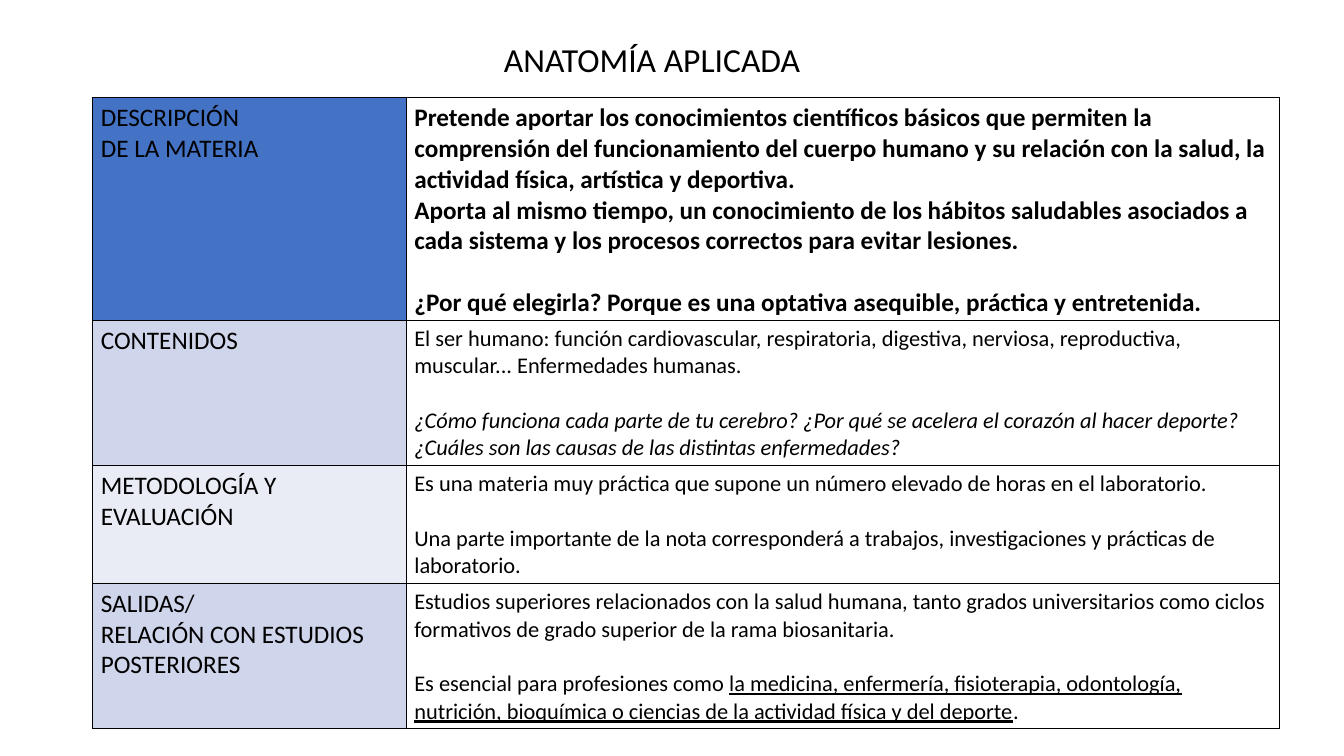
from lxml.etree import SubElement
from pptx import Presentation
from pptx.dml.color import RGBColor
from pptx.oxml.ns import qn
from pptx.util import Inches, Pt

BLACK = RGBColor(0x00, 0x00, 0x00)
BLUE = RGBColor(0x44, 0x72, 0xC4)
LIGHT = RGBColor(0xCF, 0xD5, 0xEA)
PALE = RGBColor(0xE9, 0xEB, 0xF5)
FONT = "Calibri"
LABEL_SIZE = 18
LINE_HEIGHT = 1.22

TITLE = "ANATOMÍA APLICADA"
COLUMN_WIDTHS = [3.11, 8.66]

# Each section: height, label colour, label lines, body size, body paragraphs.
# A paragraph is a list of (text, style); the last one stands a line apart.
SECTIONS = [
    (2.2, BLUE, ["DESCRIPCIÓN", "DE LA MATERIA"], 18, [
        [("Pretende aportar los conocimientos científicos básicos que permiten la "
          "comprensión del funcionamiento del cuerpo humano y su relación con la "
          "salud, la actividad física, artística y deportiva.", "bold")],
        [("Aporta al mismo tiempo, un conocimiento de los hábitos saludables "
          "asociados a cada sistema y los procesos correctos para evitar "
          "lesiones.", "bold")],
        [("¿Por qué elegirla? Porque es una optativa asequible, práctica y "
          "entretenida.", "bold")],
    ]),
    (1.44, LIGHT, ["CONTENIDOS"], 16, [
        [("El ser humano: función cardiovascular, respiratoria, digestiva, "
          "nerviosa, reproductiva, muscular... Enfermedades humanas.", "plain")],
        [("¿Cómo funciona cada parte de tu cerebro? ¿Por qué se acelera el corazón "
          "al hacer deporte? ¿Cuáles son las causas de las distintas "
          "enfermedades?", "italic")],
    ]),
    (1.17, PALE, ["METODOLOGÍA Y", "EVALUACIÓN"], 16, [
        [("Es una materia muy práctica que supone un número elevado de horas en el "
          "laboratorio.", "plain")],
        [("Una parte importante de la nota corresponderá a trabajos, "
          "investigaciones y prácticas de laboratorio.", "plain")],
    ]),
    (1.43, LIGHT, ["SALIDAS/", "RELACIÓN CON ESTUDIOS", "POSTERIORES"], 16, [
        [("Estudios superiores relacionados con la salud humana, tanto grados "
          "universitarios como ciclos formativos de grado superior de la rama "
          "biosanitaria.", "plain")],
        [("Es esencial para profesiones como ", "plain"),
         ("la medicina, enfermería, fisioterapia, odontología, nutrición, "
          "bioquímica o ciencias de la actividad física y del deporte", "underline"),
         (".", "plain")],
    ]),
]


def add_span(para, text, size, style="plain"):
    span = para.add_run()
    span.text = text
    font = span.font
    font.name, font.size = FONT, Pt(size)
    font.color.rgb = BLACK
    font.bold = style == "bold"
    font.italic = style == "italic"
    font.underline = style == "underline"


def write_paragraphs(frame, paragraphs, size):
    for index, spans in enumerate(paragraphs):
        para = frame.add_paragraph() if index else frame.paragraphs[0]
        for text, style in spans:
            add_span(para, text, size, style)
    return para


def prepare_cell(cell):
    """Set the margins and a thin black line on every side."""
    cell.margin_left = cell.margin_right = Inches(0.08)
    cell.margin_top = cell.margin_bottom = Inches(0.05)
    properties = cell._tc.get_or_add_tcPr()
    for side in ("a:lnL", "a:lnR", "a:lnT", "a:lnB"):
        line = SubElement(properties, qn(side), w=str(Pt(0.75)))
        fill = SubElement(line, qn("a:solidFill"))
        SubElement(fill, qn("a:srgbClr"), val=str(BLACK))


def add_title(page):
    box = page.shapes.add_textbox(Inches(4.9), Inches(0.34), Inches(4.11), Inches(0.91))
    box.text_frame.word_wrap = True
    add_span(box.text_frame.paragraphs[0], TITLE, 24)


def add_sections(page):
    height = sum(section[0] for section in SECTIONS)
    table = page.shapes.add_table(
        len(SECTIONS), len(COLUMN_WIDTHS), Inches(0.92), Inches(0.97),
        Inches(sum(COLUMN_WIDTHS)), Inches(height)).table
    table.first_row = table.horz_banding = False
    for column, width in zip(table.columns, COLUMN_WIDTHS):
        column.width = Inches(width)
    for row, (height, color, label, size, body) in zip(table.rows, SECTIONS):
        row.height = Inches(height)
        label_cell, body_cell = row.cells
        prepare_cell(label_cell)
        prepare_cell(body_cell)
        label_cell.fill.solid()
        label_cell.fill.fore_color.rgb = color
        body_cell.fill.background()
        label_lines = [[(line, "plain")] for line in label]
        write_paragraphs(label_cell.text_frame, label_lines, LABEL_SIZE)
        last = write_paragraphs(body_cell.text_frame, body, size)
        last.space_before = Pt(size * LINE_HEIGHT)


def main():
    deck = Presentation()
    deck.slide_width, deck.slide_height = Inches(13.33), Inches(7.5)
    page = deck.slides.add_slide(deck.slide_layouts[6])
    add_title(page)
    add_sections(page)
    deck.save("out.pptx")


if __name__ == "__main__":
    main()
